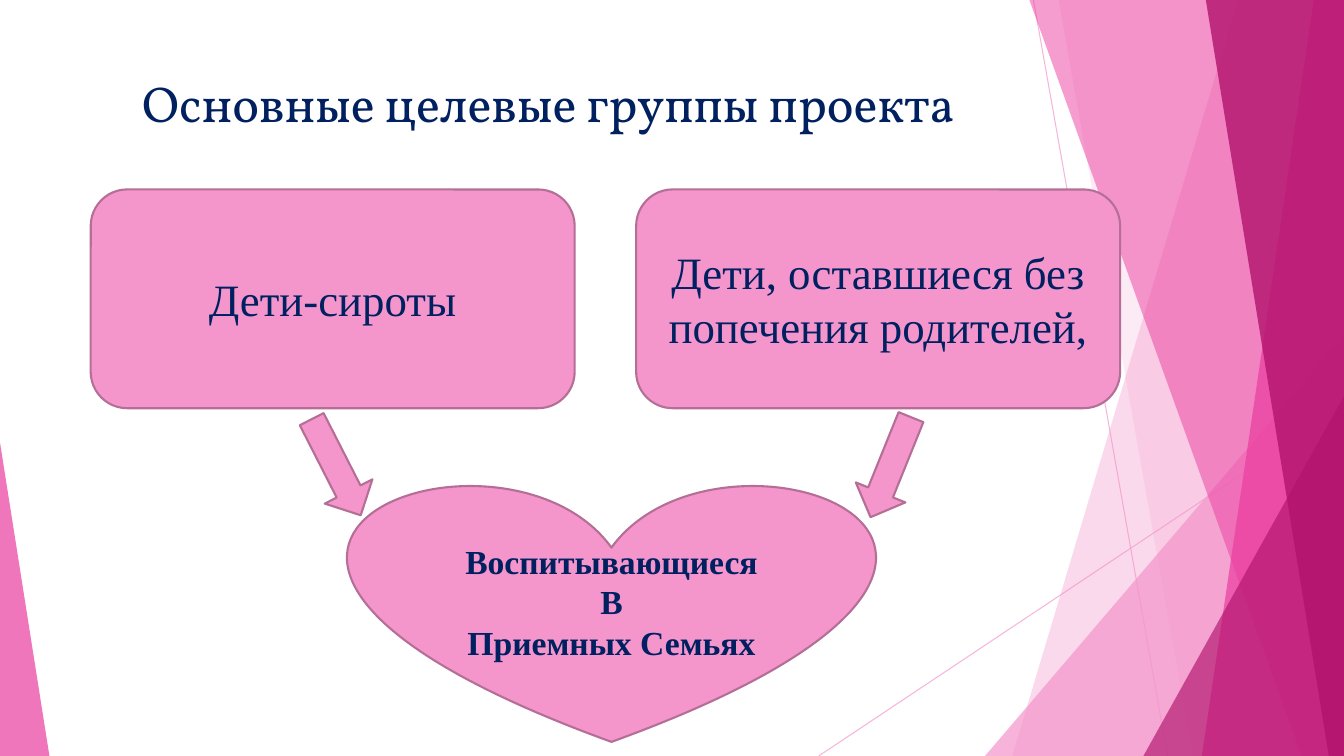
"""Build a slide showing the target groups of a project."""
from lxml.etree import SubElement
from pptx import Presentation
from pptx.dml.color import RGBColor
from pptx.enum.shapes import MSO_CONNECTOR as Link, MSO_SHAPE as Kind
from pptx.enum.text import MSO_ANCHOR as Anchor, PP_ALIGN as Align
from pptx.oxml.ns import qn
from pptx.util import Inches, Pt

WIDE, HIGH = 13.33, 7.5
PINK, ROSE, WINE = "F496CB", "EB3D9F", "B2136D"
EDGE, NAVY = "B56F96", "002060"
SERIF = "Times New Roman"

TITLE = "Основные целевые группы проекта"
GROUPS = [
    (6.31, "Дети, оставшиеся без попечения родителей,"),
    (0.9, "Дети-сироты"),
]
ARROWS = [(3.07, 333), (8.57, 22)]
HEART = ["Воспитывающиеся", "В", "Приемных Семьях"]

RAYS = [(10.25, 0, 11.58, HIGH), (WIDE, 4.03, 8.12, HIGH)]
# Each facet: kind, geometry, colour, opacity
FACETS = [
    ("band", (12.28, 10.04), PINK, 36),
    ("band", (10.5, 11.83), PINK, 20),
    ("peak", (9.77, 3.33, 3.56, 1), PINK, 72),
    ("band", (10.21, 12.91), ROSE, 50),
    ("band", (13.03, 11.92), ROSE, 70),
    ("band", (11.96, 13.18), WINE, 80),
    ("peak", (11.34, 3.93, 1.99, 1), WINE, 66),
    ("peak", (0, 4.39, 0.49, 0), ROSE, 70),
]


def paint(fill, tint, alpha=100):
    fill.solid()
    fill.fore_color.rgb = RGBColor.from_string(tint)
    if alpha < 100:
        node = fill._xPr.find(qn("a:solidFill"))[0]
        SubElement(node, qn("a:alpha")).set("val", str(alpha * 1000))


def write(frame, lines, size, font, bold=False):
    frame.word_wrap = True
    frame.text = "\n".join(lines)
    for para in frame.paragraphs:
        para.alignment = Align.CENTER
        para.font.size = Pt(size)
        para.font.name = font
        para.font.bold = bold
        para.font.color.rgb = RGBColor.from_string(NAVY)


def add_ray(shapes, ends):
    ray = shapes.add_connector(Link.STRAIGHT, *map(Inches, ends))
    ray.line.width = Pt(0.75)
    paint(ray.line.fill, PINK, 70)
    SubElement(ray._element.spPr, qn("a:effectLst"))


def add_facet(shapes, kind, geom, tint, alpha):
    if kind == "band":
        top, foot = geom
        dots = [(WIDE, 0), (WIDE, HIGH), (foot, HIGH)]
        pen = shapes.build_freeform(Inches(top), 0)
        pen.add_line_segments([(Inches(x), Inches(y)) for x, y in dots])
        facet = pen.convert_to_shape()
    else:
        left, top, width, tip = geom
        box = map(Inches, (left, top, width, HIGH - top))
        facet = shapes.add_shape(Kind.ISOSCELES_TRIANGLE, *box)
        facet.adjustments[0] = tip
    facet.shadow.inherit = False
    facet.line.fill.background()
    paint(facet.fill, tint, alpha)


def add_block(shapes, kind, *box):
    block = shapes.add_shape(kind, *map(Inches, box))
    block.shadow.inherit = False
    paint(block.fill, PINK)
    paint(block.line.fill, EDGE)
    block.line.width = Pt(1.5)
    block.text_frame.vertical_anchor = Anchor.MIDDLE
    return block


def main():
    deck = Presentation()
    deck.slide_width, deck.slide_height = Inches(WIDE), Inches(HIGH)
    shapes = deck.slides.add_slide(deck.slide_layouts[5]).shapes

    for ends in RAYS:
        add_ray(shapes, ends)
    for facet in FACETS:
        add_facet(shapes, *facet)

    title = shapes.title
    title.left, title.top = Inches(0.74), Inches(0.67)
    title.width, title.height = Inches(9.4), Inches(1.44)
    write(title.text_frame, [TITLE], 36, "Vollkorn")
    title.text_frame.vertical_anchor = Anchor.TOP

    for left, label in GROUPS:
        card = add_block(shapes, Kind.ROUNDED_RECTANGLE, left, 1.88, 4.8, 2.17)
        write(card.text_frame, [label], 32, SERIF)
    for left, turn in ARROWS:
        arrow = add_block(shapes, Kind.DOWN_ARROW, left, 4.1, 0.53, 1.07)
        arrow.rotation = turn
    heart = add_block(shapes, Kind.HEART, 3.46, 4.79, 5.21, 2.57)
    write(heart.text_frame, HEART, 24, SERIF, True)

    deck.save("out.pptx")


if __name__ == "__main__":
    main()
